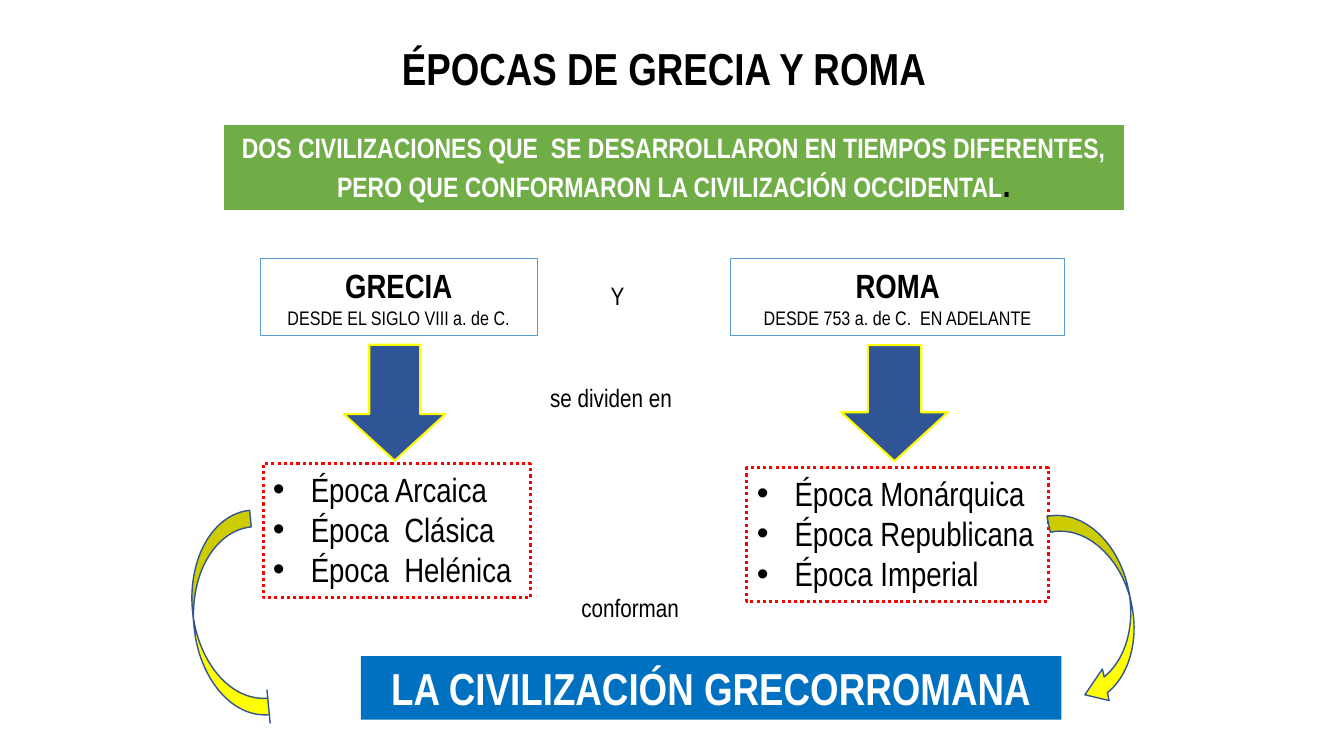
from lxml.etree import SubElement
from pptx import Presentation
from pptx.dml.color import RGBColor
from pptx.enum.dml import MSO_LINE
from pptx.enum.shapes import MSO_SHAPE as SHAPE
from pptx.enum.text import MSO_ANCHOR as ANCHOR, MSO_AUTO_SIZE as AUTO_SIZE, PP_ALIGN as ALIGN
from pptx.oxml.ns import qn
from pptx.util import Pt

BLACK, WHITE, YELLOW, RED = "000000", "FFFFFF", "FFFF00", "FF0000"
GREEN, BLUE, NAVY, DARK_BLUE, LIGHT_BLUE = "70AD47", "0070C0", "2F5597", "325491", "5B9BD5"


def rgb(color):
    return RGBColor.from_string(color)


class EpochSlide:
    font_name = "Arial Narrow"
    bullet_indent = 27

    def __init__(self, presentation):
        self.slide = presentation.slides.add_slide(presentation.slide_layouts[6])

    def style_font(self, font, size, color, bold=False):
        font.name = self.font_name
        font.size = Pt(size)
        font.bold = bold
        font.color.rgb = rgb(color)

    def set_text(self, shape, lines, align=ALIGN.CENTER):
        """Fill the shape with (text, size, color, bold) paragraphs."""
        frame = shape.text_frame
        frame.word_wrap = True
        frame.auto_size = AUTO_SIZE.SHAPE_TO_FIT_TEXT
        for index, (text, size, color, bold) in enumerate(lines):
            paragraph = frame.add_paragraph() if index else frame.paragraphs[0]
            paragraph.alignment = align
            self.style_font(paragraph.font, size, color, bold)
            paragraph.add_run().text = text

    def label(self, box, text, size=18, bold=False, align=ALIGN.LEFT):
        shape = self.slide.shapes.add_textbox(*map(Pt, box))
        self.set_text(shape, [(text, size, BLACK, bold)], align)

    def shape(self, kind, box, fill=None, line=None, width=1, rotation=0, adjustments=()):
        shape = self.slide.shapes.add_shape(kind, *map(Pt, box))
        shape.shadow.inherit = False
        shape.rotation = rotation
        for index, value in enumerate(adjustments):
            shape.adjustments[index] = value
        if fill:
            shape.fill.solid()
            shape.fill.fore_color.rgb = rgb(fill)
        else:
            shape.fill.background()
        if line:
            shape.line.color.rgb = rgb(line)
            shape.line.width = Pt(width)
        else:
            shape.line.fill.background()
        return shape

    def panel(self, box, lines, align=ALIGN.CENTER, anchor=ANCHOR.MIDDLE, **style):
        shape = self.shape(SHAPE.RECTANGLE, box, **style)
        self.set_text(shape, lines, align)
        shape.text_frame.vertical_anchor = anchor
        return shape

    def civilization(self, box, name, dates):
        lines = [(name, 24, BLACK, True), (dates, 14, BLACK, False)]
        self.panel(box, lines, line=LIGHT_BLUE, width=0.75)

    def epochs(self, box, names):
        """Dotted box with a bulleted list."""
        lines = [(f"Época {name}", 24, BLACK, False) for name in names]
        shape = self.panel(box, lines, ALIGN.LEFT, ANCHOR.TOP, line=RED, width=2.25)
        shape.line.dash_style = MSO_LINE.ROUND_DOT
        for paragraph in shape.text_frame.paragraphs:
            properties = paragraph._p.get_or_add_pPr()
            properties.set("marL", str(Pt(self.bullet_indent)))
            properties.set("indent", str(-Pt(self.bullet_indent)))
            bullet_font = SubElement(properties, qn("a:buFont"))
            bullet_font.set("typeface", "Arial")
            bullet = SubElement(properties, qn("a:buChar"))
            bullet.set("char", "•")
            # The schema wants the default font after the bullet.
            properties.append(properties.find(qn("a:defRPr")))

    def block_arrow(self, box):
        self.shape(SHAPE.RIGHT_ARROW, box, NAVY, YELLOW, 1.5, 90, (0.5, 0.457))

    def curved_arrow(self, kind, box, rotation, head):
        self.shape(kind, box, YELLOW, DARK_BLUE, 1, rotation, (0.25, 0.5, head))


def main():
    presentation = Presentation()
    presentation.slide_width, presentation.slide_height = Pt(960), Pt(540)
    page = EpochSlide(presentation)

    page.label((253.4, 25.9, 442.1, 45.4), "ÉPOCAS DE GRECIA Y ROMA", 32, True, ALIGN.CENTER)
    summary = ("DOS CIVILIZACIONES QUE  SE DESARROLLARON EN TIEMPOS DIFERENTES, "
               "PERO QUE CONFORMARON LA CIVILIZACIÓN OCCIDENTAL")
    banner = page.panel((159.1, 88.6, 644.4, 61.9), [(summary, 20, WHITE, True)],
                        fill=GREEN, line=WHITE, width=1.5)
    period = banner.text_frame.paragraphs[0].add_run()
    period.text = "."
    page.style_font(period.font, 24, BLACK, True)

    page.civilization((185.8, 185, 198, 54.7), "GRECIA", "DESDE EL SIGLO VIII a. de C.")
    page.civilization((522, 185, 238.3, 54.7), "ROMA", "DESDE 753 a. de C.  EN ADELANTE")
    page.epochs((187.9, 331.2, 190.8, 95.8), ("Arcaica", " Clásica", " Helénica"))
    page.epochs((533.5, 334.1, 215.3, 95.8), ("Monárquica", "Republicana", "Imperial"))

    page.block_arrow((597.6, 249.8, 82.8, 76.3))
    page.block_arrow((240.5, 251.3, 82.8, 72.7))

    page.label((385.9, 269.3, 124.6, 28.8), "se dividen en")
    page.label((408.2, 419.8, 113, 28.8), "conforman")
    page.panel((257.8, 468.7, 500.4, 45.4),
               [("LA CIVILIZACIÓN GRECORROMANA", 32, WHITE, True)], fill=BLUE)

    page.curved_arrow(SHAPE.CURVED_DOWN_ARROW, (714.2, 410.4, 141.8, 46.1), 78, 0.349)
    page.curved_arrow(SHAPE.CURVED_UP_ARROW, (85.7, 419, 152.6, 47.5), 84.5, 0)
    page.label((429.1, 196.6, 45.4, 28.8), "Y")

    presentation.save("out.pptx")


if __name__ == "__main__":
    main()
